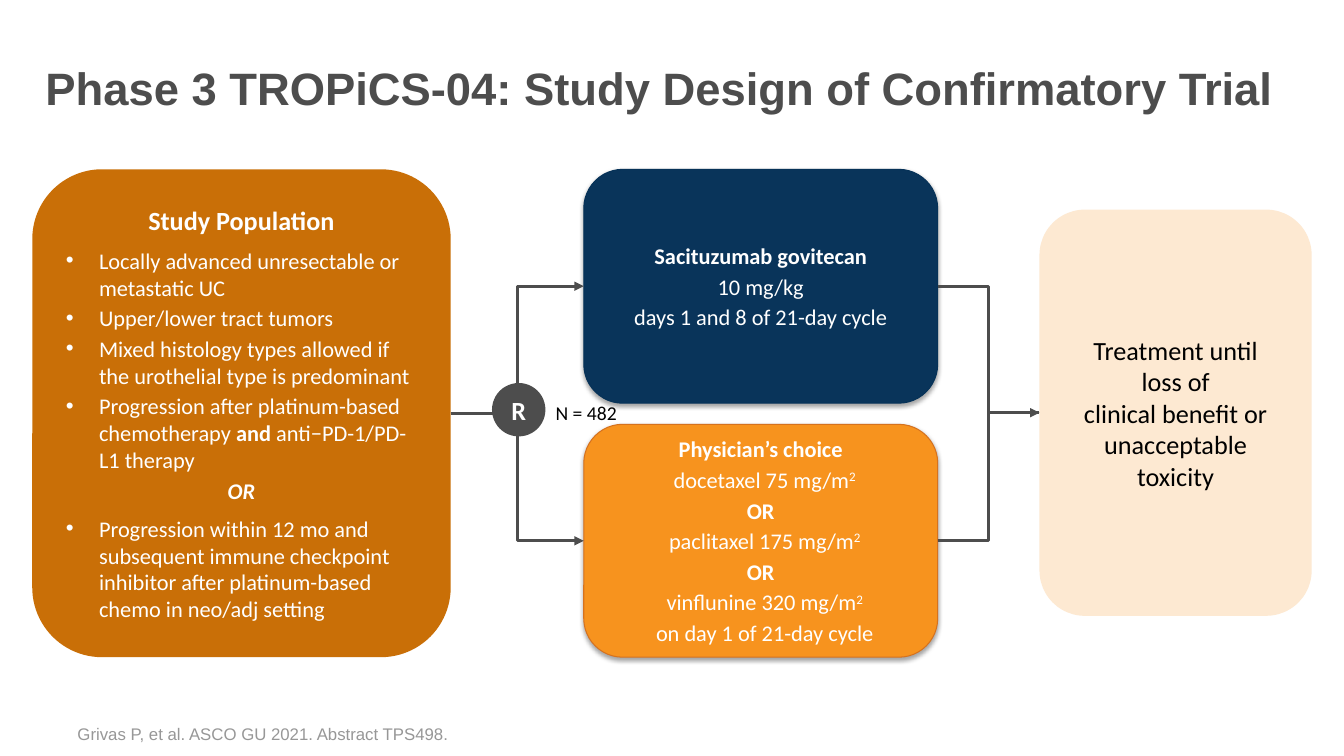
import pptx
import pptx.dml.color
import pptx.enum.shapes
import pptx.enum.text
import pptx.oxml.ns
import pptx.util
from lxml import etree

Inches = pptx.util.Inches
Pt = pptx.util.Pt
qn = pptx.oxml.ns.qn
SHAPE = pptx.enum.shapes.MSO_SHAPE
ALIGN = pptx.enum.text.PP_ALIGN
ANCHOR = pptx.enum.text.MSO_ANCHOR

GRAY, WHITE, BLACK = "4D4D4D", "FFFFFF", "000000"
LEFT_SIDE, RIGHT_SIDE = 1, 3


def rgb(value):
    return pptx.dml.color.RGBColor.from_string(value)


def add_bullet(paragraph, color, hang=0.33):
    props = paragraph._p.get_or_add_pPr()
    props.set("marL", str(Inches(hang)))
    props.set("indent", str(-Inches(hang)))
    bullet_color = etree.SubElement(props, qn("a:buClr"))
    etree.SubElement(bullet_color, qn("a:srgbClr"), val=color)
    etree.SubElement(props, qn("a:buFont"), typeface="Arial")
    etree.SubElement(props, qn("a:buChar"), char="•")


def write(frame, text, size=16, color=WHITE, font="Calibri", bold=False, italic=False,
          align=ALIGN.CENTER, after=0, indent=0, bullet=False):
    """Add a paragraph; text is a string or a list of (string, style) with style "", "bold" or "super"."""
    paragraph = frame.paragraphs[0]
    if paragraph.runs:
        paragraph = frame.add_paragraph()
    paragraph.alignment = align
    paragraph.space_after = Pt(after)
    if bullet:
        add_bullet(paragraph, color)
    elif indent:
        paragraph._p.get_or_add_pPr().set("marL", str(Inches(indent)))
    for part, style in [(text, "")] if isinstance(text, str) else text:
        for number, line in enumerate(part.split("\n")):
            if number:
                paragraph.add_line_break()
            run = paragraph.add_run()
            run.text = line
            run.font.name = font
            run.font.size = Pt(size)
            run.font.bold = bold or style == "bold"
            run.font.italic = italic
            run.font.color.rgb = rgb(color)
            if style == "super":
                run._r.get_or_add_rPr().set("baseline", "30000")


def prepare(frame, anchor, side, end):
    frame.word_wrap = True
    frame.vertical_anchor = anchor
    frame.margin_left = frame.margin_right = Inches(side)
    frame.margin_top = frame.margin_bottom = Inches(end)
    return frame


def add_label(slide, box, text, anchor, side=0.1, end=0.05, **text_format):
    label = slide.shapes.add_textbox(*map(Inches, box))
    write(prepare(label.text_frame, anchor, side, end), text, **text_format)


def add_panel(slide, box, fill, kind=SHAPE.ROUNDED_RECTANGLE, border=None, side=0.13, end=0.07):
    panel = slide.shapes.add_shape(kind, *map(Inches, box))
    panel.shadow.inherit = False
    panel.fill.solid()
    panel.fill.fore_color.rgb = rgb(fill)
    if border:
        panel.line.color.rgb = rgb(border)
        panel.line.width = Pt(0.75)
    else:
        panel.line.fill.background()
    prepare(panel.text_frame, ANCHOR.MIDDLE, side, end)
    return panel


def add_soft_shadow(panel):
    effects = panel._element.spPr.find(qn("a:effectLst"))
    shadow = etree.SubElement(effects, qn("a:outerShdw"), blurRad=str(Pt(3.1)),
                              dist=str(Pt(1.8)), dir="5400000", rotWithShape="0")
    shadow_color = etree.SubElement(shadow, qn("a:srgbClr"), val=BLACK)
    etree.SubElement(shadow_color, qn("a:alpha"), val="35000")


def add_population(slide, box):
    population = add_panel(slide, box, "C96F07")
    frame = population.text_frame
    write(frame, "Study Population", size=18.7, bold=True, after=8)
    criteria = [
        "Locally advanced unresectable or metastatic UC",
        "Upper/lower tract tumors",
        "Mixed histology types allowed if the urothelial type is predominant",
        [("Progression after platinum-based chemotherapy ", ""), ("and", "bold"),
         (" anti−PD-1/PD-L1 therapy", "")],
    ]
    for criterion in criteria:
        write(frame, criterion, align=ALIGN.LEFT, after=2.7, bullet=True)
    write(frame, "OR", bold=True, italic=True, after=8)
    write(frame, "Progression within 12 mo and subsequent immune checkpoint inhibitor "
          "after platinum-based chemo in neo/adj setting",
          align=ALIGN.LEFT, after=8, bullet=True)
    return population


def add_study_arm(slide, box):
    arm = add_panel(slide, box, "09345A", border="063258")
    add_soft_shadow(arm)
    write(arm.text_frame, "Sacituzumab govitecan", bold=True, after=2.7)
    for dosing in ("10 mg/kg", "days 1 and 8 of 21-day cycle"):
        write(arm.text_frame, dosing, after=2.7)
    return arm


def add_control_arm(slide, box):
    arm = add_panel(slide, box, "F7931E", border="D6721E", side=0)
    add_soft_shadow(arm)
    frame = arm.text_frame
    write(frame, "Physician’s choice", bold=True, after=2.7)
    for number, dose in enumerate(("docetaxel 75", "paclitaxel 175", "vinflunine 320")):
        if number:
            write(frame, "OR", bold=True, after=2.7)
        write(frame, [(dose + " mg/m", ""), ("2", "super")], after=2.7, indent=0.08)
    write(frame, "on day 1 of 21-day cycle", after=2.7, indent=0.08)
    return arm


def add_treatment(slide, box):
    treatment = add_panel(slide, box, "FDE9D2")
    for text in ("Treatment until\nloss of", "clinical benefit or unacceptable toxicity"):
        write(treatment.text_frame, text, size=18.7, color=BLACK)
    return treatment


def join(slide, start, end, arrow=True):
    """Draw an elbow line from the right side of start to the left side of end."""
    elbow = slide.shapes.add_connector(pptx.enum.shapes.MSO_CONNECTOR.ELBOW, 0, 0, 0, 0)
    elbow.begin_connect(start, RIGHT_SIDE)
    elbow.end_connect(end, LEFT_SIDE)
    elbow.line.color.rgb = rgb(GRAY)
    elbow.line.width = Pt(2.25)
    if arrow:
        etree.SubElement(elbow.line._get_or_add_ln(), qn("a:tailEnd"), type="triangle")
    etree.SubElement(elbow._element.spPr, qn("a:effectLst"))


def add_randomization(slide, box):
    """Place the R circle at the left of the box and the sample size beside it."""
    left, top, width, height = box
    circle = add_panel(slide, (left, top, height, height), GRAY, kind=SHAPE.OVAL, side=0, end=0)
    write(circle.text_frame, "R", size=18.7, bold=True)
    add_label(slide, (left + 0.5, top + 0.18, width - 0.5, 0.2), "N = 482", ANCHOR.TOP,
              side=0, end=0, size=14, color=BLACK)


def main():
    deck = pptx.Presentation()
    deck.slide_width, deck.slide_height = Inches(13.33), Inches(7.5)
    slide = deck.slides.add_slide(deck.slide_layouts[6])

    add_label(slide, (0.15, 0.22, 12.78, 1.3),
              "Phase 3 TROPiCS-04: Study Design of Confirmatory Trial", ANCHOR.MIDDLE,
              size=32.4, color=GRAY, font="Arial", bold=True)
    population = add_population(slide, (0.32, 1.68, 4.15, 4.84))
    arms = [add_study_arm(slide, (5.79, 1.68, 3.51, 2.32)),
            add_control_arm(slide, (5.79, 4.21, 3.51, 2.31))]
    treatment = add_treatment(slide, (10.31, 2.08, 2.7, 4.03))
    for arm in arms:
        join(slide, population, arm)
        join(slide, arm, treatment, arrow=arm is arms[-1])
    add_randomization(slide, (4.88, 3.8, 1.37, 0.53))
    add_label(slide, (0.67, 6.95, 11.75, 0.48),
              "Grivas P, et al. ASCO GU 2021. Abstract TPS498.", ANCHOR.BOTTOM,
              size=12, color="979797", font="Arial", align=ALIGN.LEFT)
    deck.save("out.pptx")


if __name__ == "__main__":
    main()
